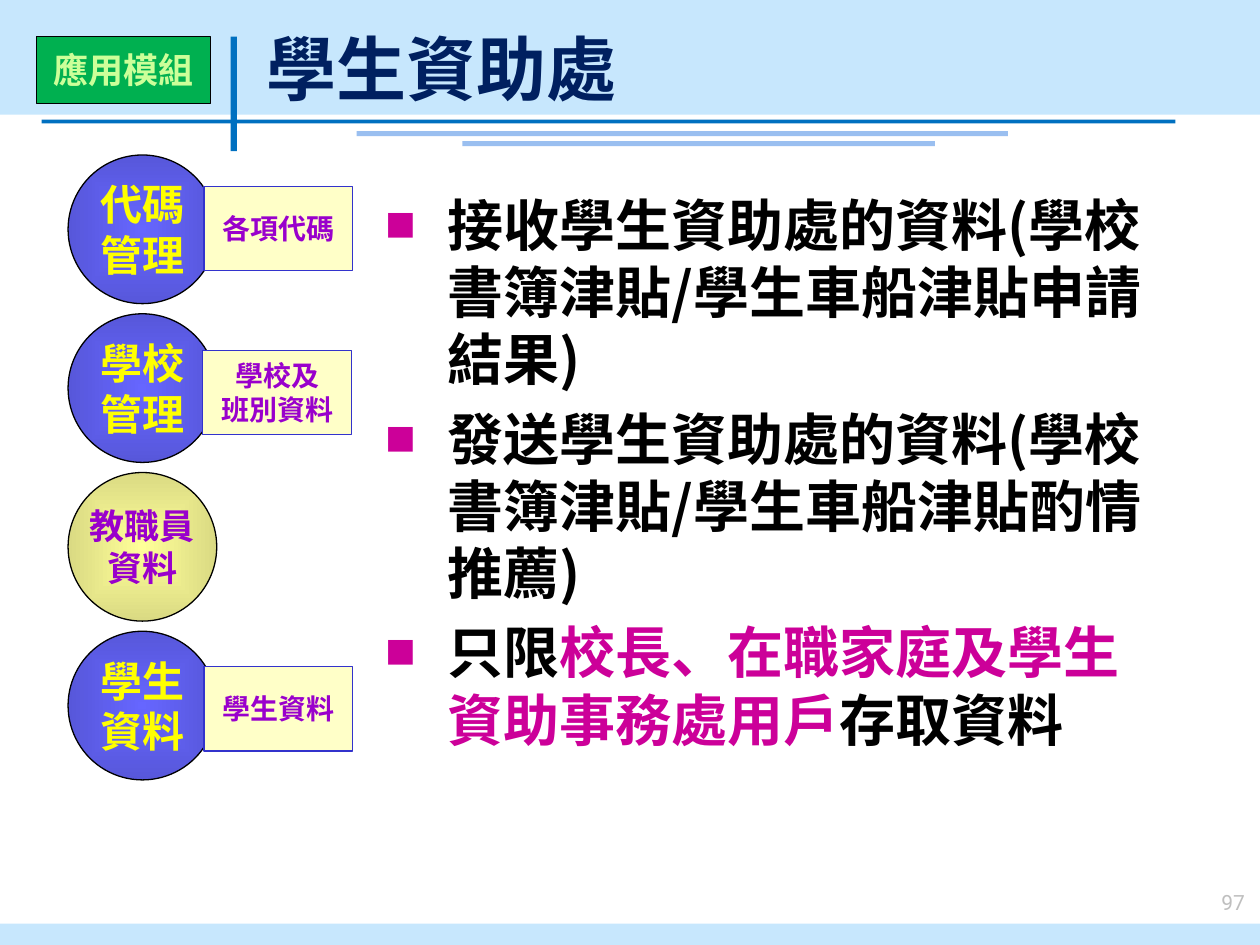
from dataclasses import dataclass

from lxml.etree import SubElement
from pptx import Presentation
from pptx.dml.color import RGBColor as Color
from pptx.enum.shapes import MSO_SHAPE as Preset
from pptx.enum.text import MSO_ANCHOR as Anchor, MSO_AUTO_SIZE as AutoSize, PP_ALIGN as Align
from pptx.oxml.ns import qn
from pptx.util import Inches, Pt


@dataclass(frozen=True)
class Theme:
    font: str = "Noto Sans CJK SC"
    number_font: str = "Roboto"
    band: str = "C7E7FD"
    rule: str = "0070C0"
    soft_rule: str = "9ABFF0"
    title: str = "002060"
    black: str = "000000"
    white: str = "FFFFFF"
    accent: str = "CC0099"
    purple: str = "9900CC"
    yellow: str = "FFFF00"
    blue_ball: tuple = ("6666FF", "5757DA")
    sand_ball: tuple = ("FFFF99", "DADA83")
    label: str = "FFFFC8"
    label_line: str = "3333CC"
    badge: str = "00B050"
    badge_text: str = "CCFF99"
    number: str = "BFBFBF"
    title_size: int = 40
    body_size: int = 32
    ball_size: int = 24
    small_ball_size: int = 20
    badge_size: int = 20
    label_size: int = 16
    number_size: int = 12


def add_text(paragraph, text, *, size, color, font, bold=True):
    run = paragraph.add_run()
    run.text = text
    run.font.size = Pt(size)
    run.font.bold = bold
    run.font.name = font
    run.font.color.rgb = Color.from_string(color)
    SubElement(run.font._element, qn("a:ea"), typeface=font)


class SlideBuilder:
    def __init__(self, slide, theme):
        self.slide = slide
        self.theme = theme

    def shape(self, preset, box, fill=None, line=None):
        shape = self.slide.shapes.add_shape(preset, *map(Inches, box))
        shape.shadow.inherit = False
        if fill:
            shape.fill.solid()
            shape.fill.fore_color.rgb = Color.from_string(fill)
        if line:
            shape.line.color.rgb = Color.from_string(line)
            shape.line.width = Pt(0.75)
        else:
            shape.line.fill.background()
        return shape

    def centred_text(self, shape, lines, size, color):
        frame = shape.text_frame
        frame.word_wrap = False
        frame.vertical_anchor = Anchor.MIDDLE
        for index, line in enumerate(lines):
            paragraph = frame.add_paragraph() if index else frame.paragraphs[0]
            paragraph.alignment = Align.CENTER
            add_text(paragraph, line, size=size, color=color, font=self.theme.font)

    def panel(self, box, lines, fill, line, size, color):
        shape = self.shape(Preset.RECTANGLE, box, fill, line)
        self.centred_text(shape, lines, size, color)

    def ball(self, box, lines, colors, size, color):
        shape = self.shape(Preset.OVAL, box, line=self.theme.black)
        shape.fill.gradient()
        gradient = shape._element.spPr.find(qn("a:gradFill"))
        for child in list(gradient):
            gradient.remove(child)
        stops = SubElement(gradient, qn("a:gsLst"))
        for position, stop_color in zip(("0", "100000"), colors):
            stop = SubElement(stops, qn("a:gs"), pos=position)
            SubElement(stop, qn("a:srgbClr"), val=stop_color)
        center = SubElement(gradient, qn("a:path"), path="shape")
        SubElement(center, qn("a:fillToRect"), l="50000", t="50000", r="50000", b="50000")
        self.centred_text(shape, lines, size, color)

    def text_box(self, box, text, align=Align.LEFT, **style):
        frame = self.slide.shapes.add_textbox(*map(Inches, box)).text_frame
        frame.word_wrap = True
        frame.auto_size = AutoSize.NONE
        frame.paragraphs[0].alignment = align
        add_text(frame.paragraphs[0], text, **style)

    def bullets(self, box, items):
        theme = self.theme
        frame = self.shape(Preset.RECTANGLE, box, theme.white).text_frame
        frame.word_wrap = True
        frame.vertical_anchor = Anchor.TOP
        for index, parts in enumerate(items):
            paragraph = frame.add_paragraph() if index else frame.paragraphs[0]
            properties = paragraph._p.get_or_add_pPr()
            properties.set("marL", str(Inches(0.49)))
            properties.set("indent", str(-Inches(0.49)))
            bullet_color = SubElement(properties, qn("a:buClr"))
            SubElement(bullet_color, qn("a:srgbClr"), val=theme.accent)
            SubElement(properties, qn("a:buSzPct"), val="55000")
            SubElement(properties, qn("a:buFont"), typeface=theme.font)
            SubElement(properties, qn("a:buChar"), char="■")
            paragraph.alignment = Align.LEFT
            paragraph.space_before = Pt(7 if index else 0)
            for text, color in parts:
                add_text(paragraph, text, size=theme.body_size, color=color, font=theme.font)


def main():
    presentation = Presentation()
    presentation.slide_width = Inches(10)
    presentation.slide_height = Inches(7.5)
    theme = Theme()
    builder = SlideBuilder(presentation.slides.add_slide(presentation.slide_layouts[6]), theme)

    decorations = [
        ((0, 0, 10, 0.91), theme.band),
        ((0, 7.33, 10, 0.17), theme.band),
        ((1.83, 0.29, 0.05, 0.91), theme.rule),
        ((0.33, 0.95, 9, 0.03), theme.rule),
        ((2.83, 1.04, 5.17, 0.04), theme.soft_rule),
        ((3.67, 1.12, 3.75, 0.04), theme.soft_rule),
    ]
    for box, color in decorations:
        builder.shape(Preset.RECTANGLE, box, color)

    builder.text_box((2.02, 0.15, 7.7, 0.77), "學生資助處",
                     size=theme.title_size, color=theme.title, font=theme.font)

    blue = (theme.blue_ball, theme.ball_size, theme.yellow)
    sand = (theme.sand_ball, theme.small_ball_size, theme.purple)
    modules = [
        (("代碼", "管理"), blue),
        (("學校", "管理"), blue),
        (("教職員", "資料"), sand),
        (("學生", "資料"), blue),
    ]
    for index, (lines, style) in enumerate(modules):
        builder.ball((0.54, 1.23 + 1.26 * index, 1.18, 1.18), lines, *style)

    labels = [
        (1.62, 1.48, ("各項代碼",)),
        (1.61, 2.78, ("學校及", "班別資料")),
        (1.62, 5.29, ("學生資料",)),
    ]
    for left, top, lines in labels:
        builder.panel((left, top, 1.18, 0.67), lines, theme.label, theme.label_line,
                      theme.label_size, theme.purple)

    builder.panel((0.29, 0.29, 1.38, 0.53), ("應用模組",), theme.badge, theme.black,
                  theme.badge_size, theme.badge_text)
    builder.text_box((9.41, 7.01, 0.57, 0.5), "97", Align.RIGHT, size=theme.number_size,
                     color=theme.number, font=theme.number_font, bold=False)

    builder.bullets((2.96, 1.46, 6.21, 5.18), [
        [("接收學生資助處的資料(學校書簿津貼/學生車船津貼申請結果)", theme.black)],
        [("發送學生資助處的資料(學校書簿津貼/學生車船津貼酌情推薦)", theme.black)],
        [("只限", theme.black),
         ("校長、在職家庭及學生資助事務處用戶", theme.accent),
         ("存取資料", theme.black)],
    ])
    presentation.save("out.pptx")


if __name__ == "__main__":
    main()
